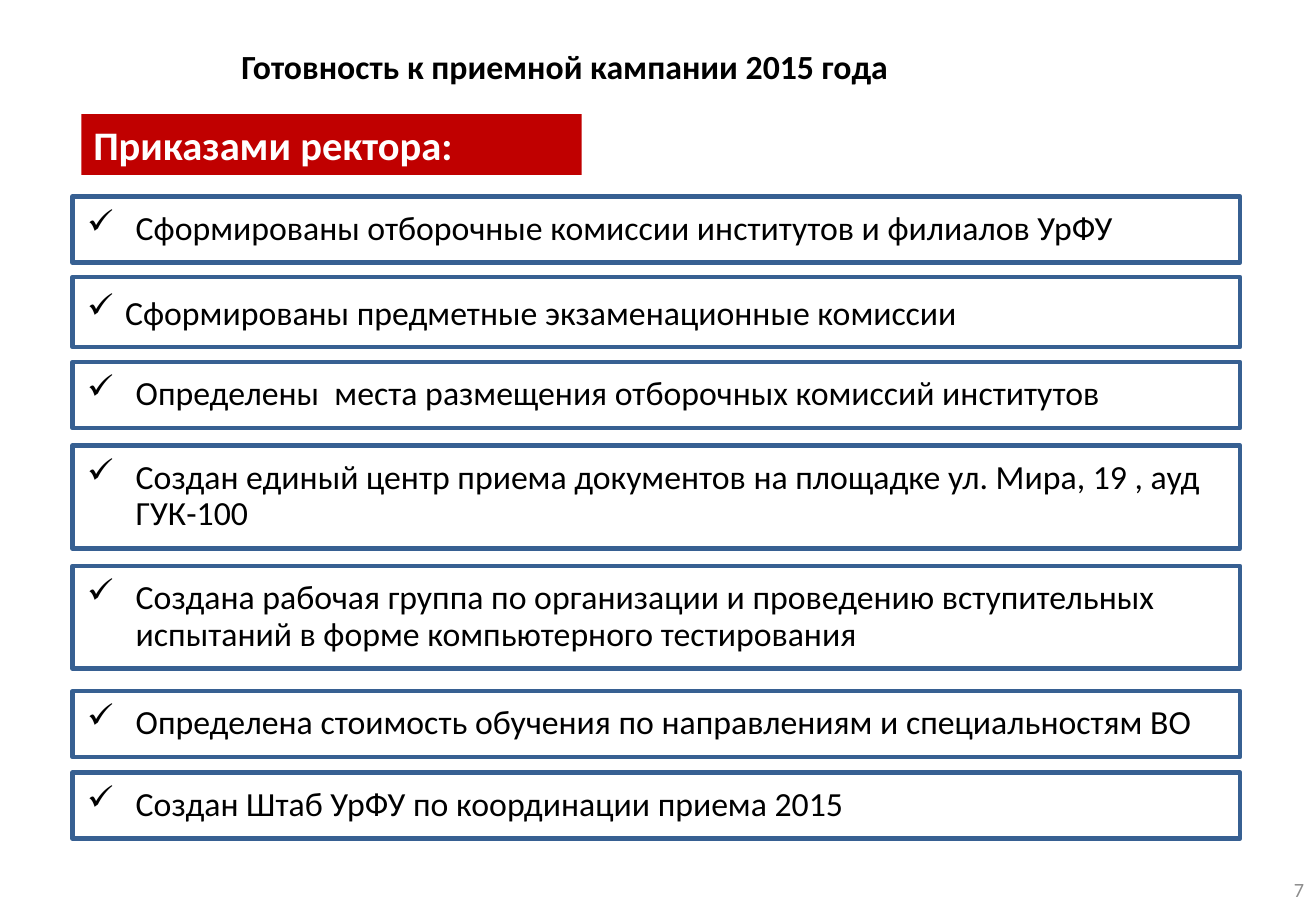
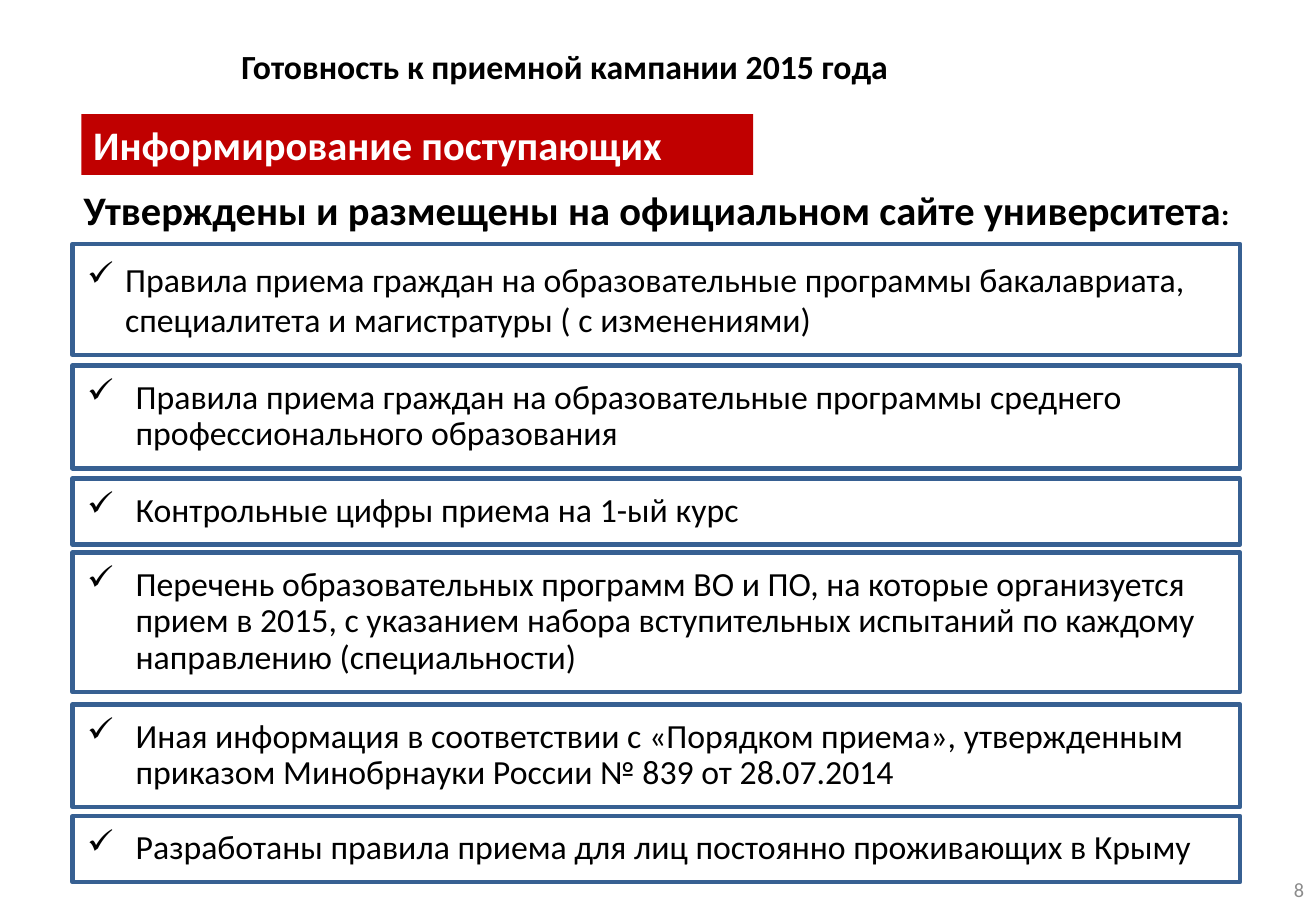
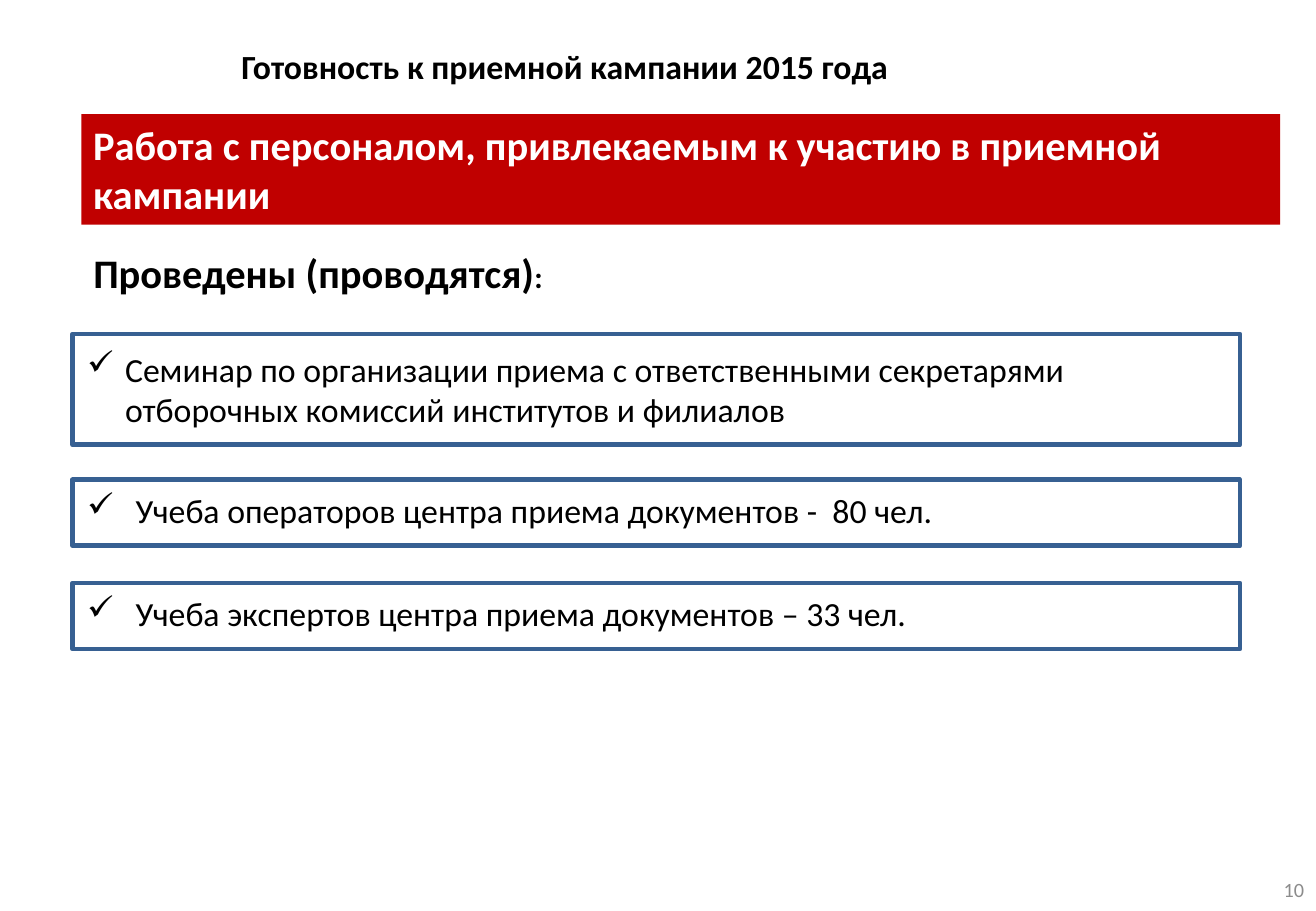
import pptx
import pptx.dml.color
import pptx.enum.shapes
import pptx.enum.text
import pptx.oxml.ns
import pptx.util
from lxml import etree

Pt = pptx.util.Pt
ANCHOR = pptx.enum.text.MSO_ANCHOR
ALIGN = pptx.enum.text.PP_ALIGN

COLORS = {"band": "C00000", "frame": "376092", "text": "000000",
          "band_text": "FFFFFF", "number": "8C8C8C"}
FONT = "Calibri"
TITLE = "Готовность к приемной кампании 2015 года"

# Each item: top, number of lines, text. A "loose" item has full line spacing.
SLIDES = [
    {"number": "7",
     "band": ("Приказами ректора:", 296.6, 36),
     "lead": None,
     "loose": 1,
     "items": [
         (116.6, 1, "Сформированы отборочные комиссии институтов и филиалов УрФУ"),
         (164.2, 1, "Сформированы предметные экзаменационные комиссии"),
         (214.6, 1, "Определены  места размещения отборочных комиссий институтов"),
         (264.2, 2, "Создан единый центр приема документов на площадке ул. Мира, 19 , ауд ГУК-100"),
         (335.5, 2, "Создана рабочая группа по организации и проведению вступительных "
                    "испытаний в форме компьютерного тестирования"),
         (409.7, 1, "Определена стоимость обучения по направлениям и специальностям ВО"),
         (457.9, 1, "Создан Штаб УрФУ по координации приема 2015"),
     ]},
    {"number": "8",
     "band": ("Информирование поступающих", 398.2, 36),
     "lead": ("Утверждены и размещены на официальном сайте университета", 42.5, 109.4),
     "loose": 0,
     "items": [
         (144.7, 2, "Правила приема граждан на образовательные программы бакалавриата, "
                    "специалитета и магистратуры ( с изменениями)"),
         (216.7, 2, "Правила приема граждан на образовательные программы среднего "
                    "профессионального образования"),
         (283.7, 1, "Контрольные цифры приема на 1-ый курс"),
         (327.6, 3, "Перечень образовательных программ ВО и ПО, на которые организуется "
                    "прием в 2015, с указанием набора вступительных испытаний по каждому "
                    "направлению (специальности)"),
         (417.6, 2, "Иная информация в соответствии с «Порядком приема», утвержденным "
                    "приказом Минобрнауки России № 839 от 28.07.2014"),
         (483.8, 1, "Разработаны правила приема для лиц постоянно проживающих в Крыму"),
     ]},
    {"number": "10",
     "band": ("Работа с персоналом, привлекаемым к участию в приемной кампании", 710.6, 65.5),
     "lead": ("Проведены (проводятся)", 48.2, 146.9),
     "loose": 0,
     "items": [
         (198, 2, "Семинар по организации приема с ответственными секретарями "
                  "отборочных комиссий институтов и филиалов"),
         (284.4, 1, "Учеба операторов центра приема документов -  80 чел."),
         (345.6, 1, "Учеба экспертов центра приема документов – 33 чел."),
     ]},
]

ITEM_LEFT, ITEM_WIDTH, ITEM_INSET = 43, 692, 8.64
TIGHT = {"line": 21.8, "indent": 28.8, "spacing": 0.9}
LOOSE = {"line": 24.2, "indent": 22.5, "spacing": 1.0}


def rgb(name):
    return pptx.dml.color.RGBColor.from_string(COLORS[name])


def add_bullet(para, indent):
    props = para._p.get_or_add_pPr()
    props.set("marL", str(Pt(indent)))
    props.set("indent", str(-Pt(indent)))
    bullet = etree.SubElement(props, pptx.oxml.ns.qn("a:buChar"))
    bullet.set("char", "✓")


def add_span(para, text, size, color, bold):
    span = para.add_run()
    span.text = text
    span.font.name = FONT
    span.font.size = Pt(size)
    span.font.bold = bold
    span.font.color.rgb = rgb(color)


def write(box, text, *, size=20, color="text", bold=False, align=ALIGN.LEFT,
          anchor=ANCHOR.TOP, spacing=1.0, indent=0, inset=None, grow=True):
    """Fill a box with one paragraph and return that paragraph."""
    frame = box.text_frame
    frame.word_wrap = True
    frame.vertical_anchor = anchor
    if grow:
        frame.auto_size = pptx.enum.text.MSO_AUTO_SIZE.SHAPE_TO_FIT_TEXT
    if inset is not None:
        frame.margin_left = frame.margin_right = Pt(inset)
        frame.margin_top = frame.margin_bottom = Pt(inset)
    para = frame.paragraphs[0]
    para.alignment = align
    para.line_spacing = spacing
    if indent:
        add_bullet(para, indent)
    add_span(para, text, size, color, bold)
    return para


def add_text(page, place, text, **style):
    return write(page.shapes.add_textbox(*map(Pt, place)), text, **style)


def add_rectangle(page, place, fill=None, line=None):
    box = page.shapes.add_shape(pptx.enum.shapes.MSO_SHAPE.RECTANGLE, *map(Pt, place))
    box.shadow.inherit = False
    if fill:
        box.fill.solid()
        box.fill.fore_color.rgb = rgb(fill)
    else:
        box.fill.background()
    if line:
        box.line.color.rgb = rgb(line)
        box.line.width = Pt(2.75)
    else:
        box.line.fill.background()
    return box


def add_item(page, top, lines, text, style):
    height = 2 * ITEM_INSET + lines * style["line"]
    box = add_rectangle(page, (ITEM_LEFT, top, ITEM_WIDTH, height), line="frame")
    write(box, text, spacing=style["spacing"], indent=style["indent"], inset=ITEM_INSET)


def add_page(deck, content):
    page = deck.slides.add_slide(deck.slide_layouts[6])
    add_text(page, (136, 15, 636, 39.6), TITLE, bold=True, anchor=ANCHOR.BOTTOM, grow=False)
    text, width, height = content["band"]
    band = add_rectangle(page, (48.2, 67.7, width, height), fill="band")
    write(band, text, size=24, color="band_text", bold=True)
    if content["lead"]:
        text, left, top = content["lead"]
        lead = add_text(page, (left, top, 738, 33), text, size=24, bold=True, spacing=0.9)
        add_span(lead, ":", 18, "text", True)
    for index, item in enumerate(content["items"]):
        add_item(page, *item, LOOSE if index == content["loose"] else TIGHT)
    add_text(page, (597.6, 512.6, 182.4, 28.8), content["number"], size=12, color="number",
             align=ALIGN.RIGHT, anchor=ANCHOR.MIDDLE, grow=False)


def main():
    deck = pptx.Presentation()
    deck.slide_width, deck.slide_height = Pt(780), Pt(540)
    for content in SLIDES:
        add_page(deck, content)
    deck.save("out.pptx")


if __name__ == "__main__":
    main()
